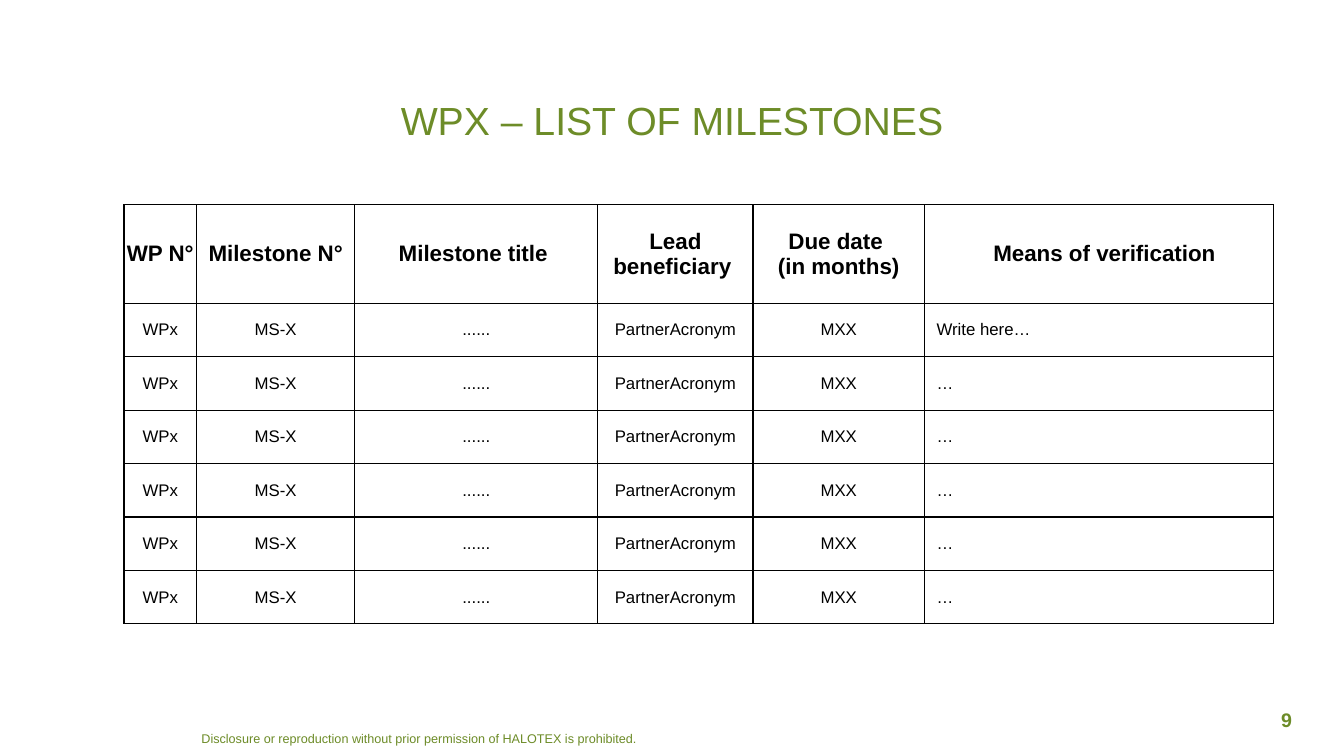
from dataclasses import dataclass
from typing import NamedTuple

from lxml.etree import SubElement
from pptx import Presentation
from pptx.dml.color import RGBColor
from pptx.enum.text import MSO_ANCHOR, PP_ALIGN
from pptx.oxml.ns import qn
from pptx.slide import Slide
from pptx.table import _Cell
from pptx.text.text import TextFrame
from pptx.util import Inches, Pt


@dataclass(frozen=True)
class Theme:
    font: str = "Arial"
    green: str = "6D8C28"
    black: str = "000000"
    title_size: int = 28
    header_size: int = 16
    body_size: int = 12
    number_size: int = 14
    footer_size: int = 9
    border_width: int = 1


THEME = Theme()


class TextStyle(NamedTuple):
    size: int
    color: str
    bold: bool = False
    align: PP_ALIGN = PP_ALIGN.LEFT
    line_spacing: float | None = None


class Label(NamedTuple):
    text: str
    left: float
    top: float
    width: float
    height: float
    style: TextStyle


class Column(NamedTuple):
    header: str
    width: float
    entry: str
    first_entry: str | None = None
    align: PP_ALIGN = PP_ALIGN.CENTER
    left_margin: float = 0.01


LABELS = [
    Label("WPX – LIST OF MILESTONES", 0.97, 0.96, 11.39, 0.69,
          TextStyle(THEME.title_size, THEME.green, align=PP_ALIGN.CENTER, line_spacing=0.9)),
    Label("9", 12.38, 6.97, 0.76, 0.4,
          TextStyle(THEME.number_size, THEME.green, bold=True, align=PP_ALIGN.CENTER)),
    Label("Disclosure or reproduction without prior permission of HALOTEX is prohibited.",
          1.9, 7.2, 5.17, 0.4, TextStyle(THEME.footer_size, THEME.green)),
]

COLUMNS = [
    Column("WP N°", 0.72, "WPx"),
    Column("Milestone N°", 1.57, "MS-X"),
    Column("Milestone title ", 2.41, "......"),
    Column("Lead beneficiary ", 1.54, "PartnerAcronym"),
    Column("Due date \n(in months)", 1.7, "MXX"),
    Column("Means of verification", 3.46, "…", "Write here…", PP_ALIGN.LEFT, 0.12),
]
MILESTONE_COUNT = 6
HEADER_HEIGHT = 0.98
MILESTONE_HEIGHT = 0.53
TABLE_LEFT, TABLE_TOP = 1.23, 2.03
CELL_MARGIN = 0.01


def write_text(frame: TextFrame, text: str, style: TextStyle) -> None:
    frame.text = text
    for paragraph in frame.paragraphs:
        paragraph.alignment = style.align
        paragraph.line_spacing = style.line_spacing
        paragraph.font.name = THEME.font
        paragraph.font.size = Pt(style.size)
        paragraph.font.bold = style.bold
        paragraph.font.color.rgb = RGBColor.from_string(style.color)


def add_label(slide: Slide, label: Label) -> None:
    box = slide.shapes.add_textbox(Inches(label.left), Inches(label.top),
                                   Inches(label.width), Inches(label.height))
    box.text_frame.word_wrap = True
    write_text(box.text_frame, label.text, label.style)


def add_borders(cell: _Cell) -> None:
    properties = cell._tc.get_or_add_tcPr()
    for side in ("a:lnL", "a:lnR", "a:lnT", "a:lnB"):
        line = SubElement(properties, qn(side), w=str(Pt(THEME.border_width)))
        fill = SubElement(line, qn("a:solidFill"))
        SubElement(fill, qn("a:srgbClr"), val=THEME.black)


def fill_cell(cell: _Cell, column: Column, row: int) -> None:
    cell.vertical_anchor = MSO_ANCHOR.MIDDLE
    cell.margin_left = Inches(column.left_margin)
    cell.margin_right = cell.margin_top = cell.margin_bottom = Inches(CELL_MARGIN)
    add_borders(cell)
    cell.fill.background()
    if row == 0:
        text = column.header
        style = TextStyle(THEME.header_size, THEME.black, True, PP_ALIGN.CENTER)
    else:
        text = column.first_entry if row == 1 and column.first_entry else column.entry
        style = TextStyle(THEME.body_size, THEME.black, align=column.align)
    write_text(cell.text_frame, text, style)


def add_milestone_table(slide: Slide) -> None:
    heights = [HEADER_HEIGHT] + [MILESTONE_HEIGHT] * MILESTONE_COUNT
    milestones = slide.shapes.add_table(
        len(heights), len(COLUMNS), Inches(TABLE_LEFT), Inches(TABLE_TOP),
        Inches(sum(column.width for column in COLUMNS)), Inches(sum(heights))).table
    milestones.horz_banding = False
    for row, height in enumerate(heights):
        milestones.rows[row].height = Inches(height)
    for index, column in enumerate(COLUMNS):
        milestones.columns[index].width = Inches(column.width)
        for row in range(len(heights)):
            fill_cell(milestones.cell(row, index), column, row)


def main() -> None:
    presentation = Presentation()
    presentation.slide_width = Inches(13.33)
    presentation.slide_height = Inches(7.5)
    slide = presentation.slides.add_slide(presentation.slide_layouts[6])
    title, *page_marks = LABELS
    add_label(slide, title)
    add_milestone_table(slide)
    for mark in page_marks:
        add_label(slide, mark)
    presentation.save("out.pptx")


if __name__ == "__main__":
    main()
